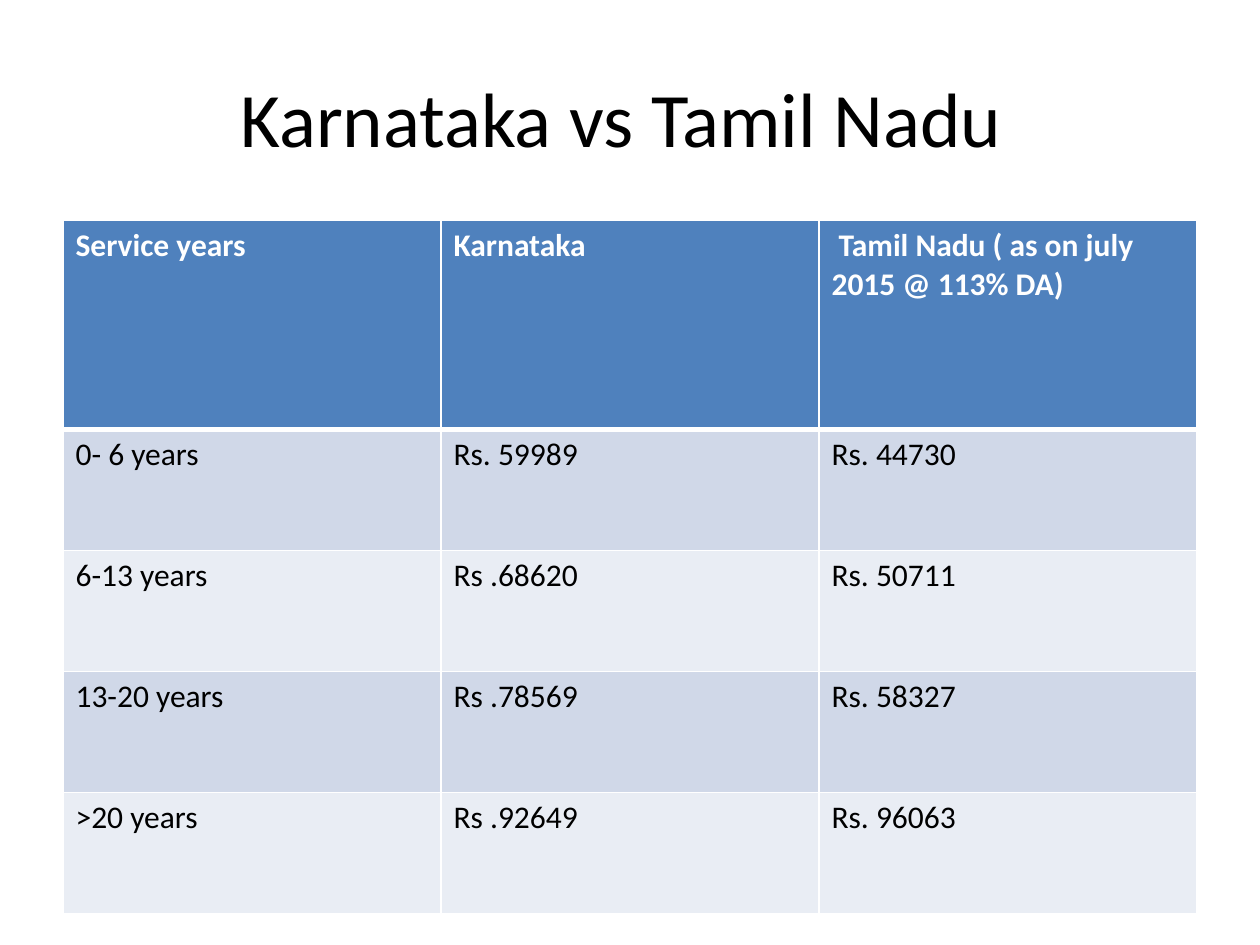
from lxml.etree import SubElement
from pptx import Presentation
from pptx.dml.color import RGBColor
from pptx.enum.text import MSO_ANCHOR, PP_ALIGN
from pptx.oxml.ns import qn
from pptx.util import Pt

TITLE = "Karnataka vs Tamil Nadu "
ROWS = [
    ("Service years", "Karnataka", " Tamil Nadu ( as on july 2015 @ 113% DA)"),
    ("0- 6 years", "Rs. 59989", "Rs. 44730"),
    ("6-13 years", "Rs .68620", "Rs. 50711"),
    ("13-20 years", "Rs .78569", "Rs. 58327"),
    (">20 years", "Rs .92649", "Rs. 96063"),
]
FONT = "Calibri"
BLACK, WHITE = "000000", "FFFFFF"
HEADER_FILL = "4F81BD"
BAND_FILLS = ("E9EDF4", "D0D8E8")  # even rows, odd rows
LEFT, WIDTH = 36, 648
TABLE_TOP, TABLE_HEIGHT, HEADER_HEIGHT = 126, 396, 119.52


def rgb(color):
    return RGBColor.from_string(color)


def style_text(p, size, color, bold=False):
    for r in p.runs:
        r.font.name = FONT
        r.font.size = Pt(size)
        r.font.bold = bold
        r.font.color.rgb = rgb(color)


def add_borders(cell, top, bottom):
    """Draw white cell borders; must run before the cell's fill is set."""
    tc_pr = cell._tc.get_or_add_tcPr()
    for side, width in (("L", 1), ("R", 1), ("T", top), ("B", bottom)):
        ln = SubElement(tc_pr, qn(f"a:ln{side}"), w=str(Pt(width)))
        fill = SubElement(ln, qn("a:solidFill"))
        SubElement(fill, qn("a:srgbClr"), val=WHITE)


prs = Presentation()
prs.slide_width, prs.slide_height = Pt(720), Pt(540)
s = prs.slides.add_slide(prs.slide_layouts[6])

title = s.shapes.add_textbox(Pt(LEFT), Pt(21.6), Pt(WIDTH), Pt(90))
tf = title.text_frame
tf.word_wrap = True
tf.vertical_anchor = MSO_ANCHOR.MIDDLE
tf.text = TITLE
tf.paragraphs[0].alignment = PP_ALIGN.CENTER
style_text(tf.paragraphs[0], 44, BLACK)

table = s.shapes.add_table(len(ROWS), len(ROWS[0]), Pt(LEFT), Pt(TABLE_TOP),
                           Pt(WIDTH), Pt(TABLE_HEIGHT)).table
body_height = (TABLE_HEIGHT - HEADER_HEIGHT) / (len(ROWS) - 1)
for i, values in enumerate(ROWS):
    header = i == 0
    table.rows[i].height = Pt(HEADER_HEIGHT if header else body_height)
    for j, value in enumerate(values):
        cell = table.cell(i, j)
        add_borders(cell, top=3 if i == 1 else 1, bottom=3 if header else 1)
        cell.fill.solid()
        cell.fill.fore_color.rgb = rgb(HEADER_FILL if header else BAND_FILLS[i % 2])
        cell.text_frame.text = value
        style_text(cell.text_frame.paragraphs[0], 18, WHITE if header else BLACK, header)

prs.save("out.pptx")
